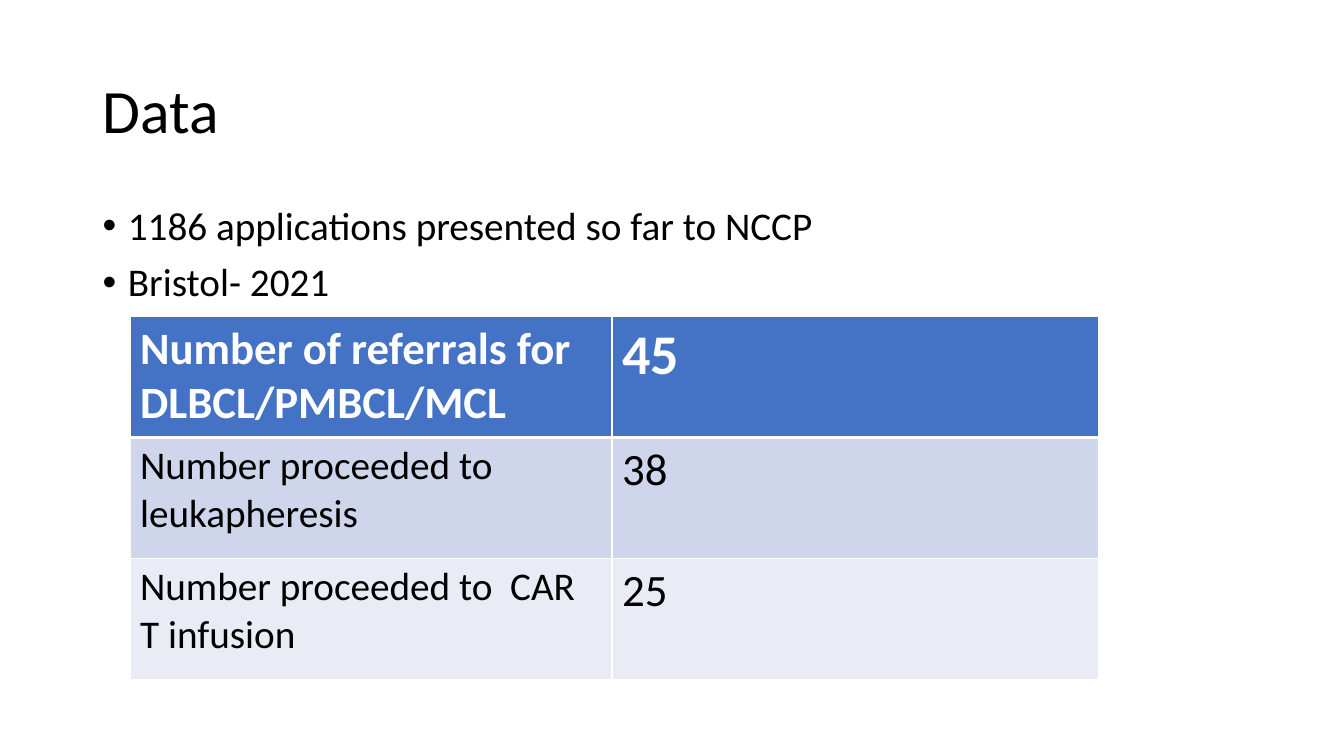
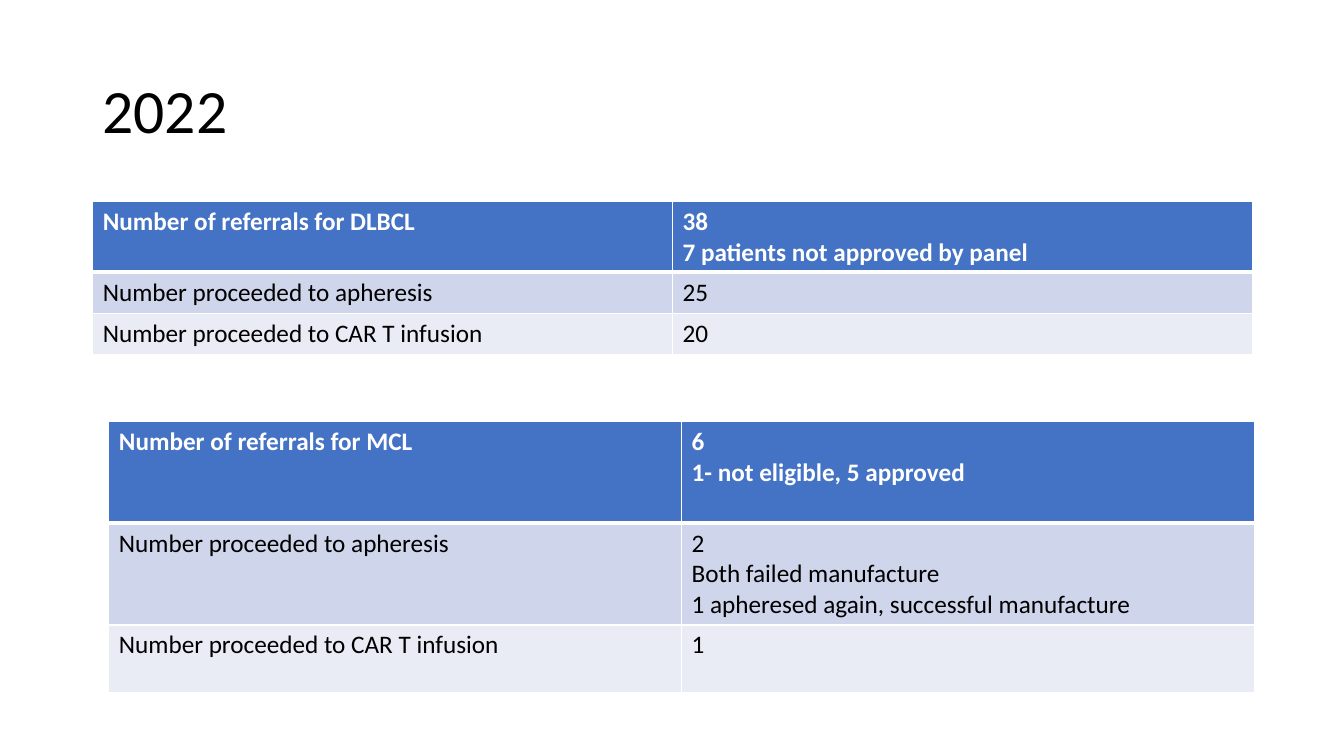
"""Build two slides of referral figures for CAR T treatment."""
from dataclasses import dataclass

from lxml.etree import SubElement
from pptx import Presentation
from pptx.dml.color import RGBColor
from pptx.enum.text import MSO_ANCHOR as Anchor
from pptx.oxml.ns import qn
from pptx.util import Inches, Pt

FONT = "Calibri"
BLACK = RGBColor(0x00, 0x00, 0x00)
WHITE = RGBColor(0xFF, 0xFF, 0xFF)
HEADER_BLUE = RGBColor(0x44, 0x72, 0xC4)
BAND_DARK = RGBColor(0xCF, 0xD5, 0xEA)
BAND_LIGHT = RGBColor(0xE9, 0xEB, 0xF5)
THIN, THICK = Pt(1), Pt(3)
TITLE_AREA = (0.92, 0.4, 11.5, 1.45)
BODY_AREA = (0.92, 2, 11.5, 4.76)


@dataclass(frozen=True)
class Row:
    label: str
    value: str
    height: float
    label_size: int = 18
    value_size: int = 18


@dataclass(frozen=True)
class Grid:
    left: float
    top: float
    widths: tuple[float, float]
    rows: tuple[Row, ...]


@dataclass(frozen=True)
class Page:
    title: str
    bullets: tuple[str, ...]
    grids: tuple[Grid, ...]


PAGES = (
    Page(
        "Data",
        ("1186 applications presented so far to NCCP", "Bristol- 2021"),
        (
            Grid(1.29, 3.14, (4.78, 4.83), (
                Row("Number of referrals for DLBCL/PMBCL/MCL", "45", 1.2, 32, 40),
                Row("Number proceeded to leukapheresis", "38", 1.2, 28, 32),
                Row("Number proceeded to  CAR T infusion", "25", 1.2, 28, 32),
            )),
        ),
    ),
    Page(
        "2022",
        (),
        (
            Grid(0.92, 2, (5.75, 5.75), (
                Row("Number of referrals for DLBCL", "38\n7 patients not approved by panel", 0.7),
                Row("Number proceeded to apheresis", "25", 0.41),
                Row("Number proceeded to CAR T infusion", "20", 0.41),
            )),
            Grid(1.08, 4.18, (5.68, 5.68), (
                Row("Number of referrals for MCL", "6\n1- not eligible, 5 approved", 1.01),
                Row(
                    "Number proceeded to apheresis",
                    "2\nBoth failed manufacture\n1 apheresed again, successful manufacture",
                    1.01,
                ),
                Row("Number proceeded to CAR T infusion", "1", 0.67),
            )),
        ),
    ),
)


def write(frame, text: str, *, size: int, color: RGBColor = BLACK, bold: bool = False,
          line_spacing: float = 1.0, space_before: int = 0, bullet: bool = False) -> None:
    """Write each line of the text as a formatted paragraph."""
    for index, line in enumerate(text.split("\n")):
        para = frame.add_paragraph() if index else frame.paragraphs[0]
        para.line_spacing = line_spacing
        para.space_before = Pt(space_before)
        span = para.add_run()
        span.text = line
        span.font.name = FONT
        span.font.size = Pt(size)
        span.font.bold = bold
        span.font.color.rgb = color
        if bullet:
            props = para._p.get_or_add_pPr()
            props.set("marL", str(Inches(0.25)))
            props.set("indent", str(-Inches(0.25)))
            SubElement(props, qn("a:buFont"), typeface="Arial")
            SubElement(props, qn("a:buChar"), char="•")


def add_text(slide, area: tuple[float, ...], text: str, *, anchor=Anchor.TOP, **style) -> None:
    """Add a wrapping text box."""
    box = slide.shapes.add_textbox(*map(Inches, area))
    box.text_frame.word_wrap = True
    box.text_frame.vertical_anchor = anchor
    write(box.text_frame, text, line_spacing=0.9, **style)


def set_borders(cell, top: int, bottom: int) -> None:
    """Give a cell white borders, thin at both sides."""
    props = cell._tc.get_or_add_tcPr()
    for side, width in (("L", THIN), ("R", THIN), ("T", top), ("B", bottom)):
        line = SubElement(props, qn(f"a:ln{side}"), w=str(width))
        fill = SubElement(line, qn("a:solidFill"))
        SubElement(fill, qn("a:srgbClr"), val=str(WHITE))


def add_grid(slide, grid: Grid) -> None:
    """Add a two-column table with a header and banded rows."""
    width, height = sum(grid.widths), sum(row.height for row in grid.rows)
    area = map(Inches, (grid.left, grid.top, width, height))
    table = slide.shapes.add_table(len(grid.rows), len(grid.widths), *area).table
    for column, column_width in zip(table.columns, grid.widths):
        column.width = Inches(column_width)
    for index, row in enumerate(grid.rows):
        header = index == 0
        table.rows[index].height = Inches(row.height)
        band = HEADER_BLUE if header else BAND_DARK if index % 2 else BAND_LIGHT
        entries = ((row.label, row.label_size), (row.value, row.value_size))
        for cell, (text, size) in zip(table.rows[index].cells, entries):
            set_borders(cell, THICK if index == 1 else THIN, THICK if header else THIN)
            cell.fill.solid()
            cell.fill.fore_color.rgb = band
            write(cell.text_frame, text, size=size, bold=header,
                  color=WHITE if header else BLACK)


def add_page(deck, page: Page) -> None:
    """Add one slide with its title, bullets and tables."""
    slide = deck.slides.add_slide(deck.slide_layouts[6])
    add_text(slide, TITLE_AREA, page.title, size=44, anchor=Anchor.MIDDLE)
    if page.bullets:
        add_text(slide, BODY_AREA, "\n".join(page.bullets), size=28, space_before=10, bullet=True)
    for grid in page.grids:
        add_grid(slide, grid)


def main() -> None:
    """Build and save the deck."""
    deck = Presentation()
    deck.slide_width, deck.slide_height = Inches(13.33), Inches(7.5)
    for page in PAGES:
        add_page(deck, page)
    deck.save("out.pptx")


if __name__ == "__main__":
    main()
